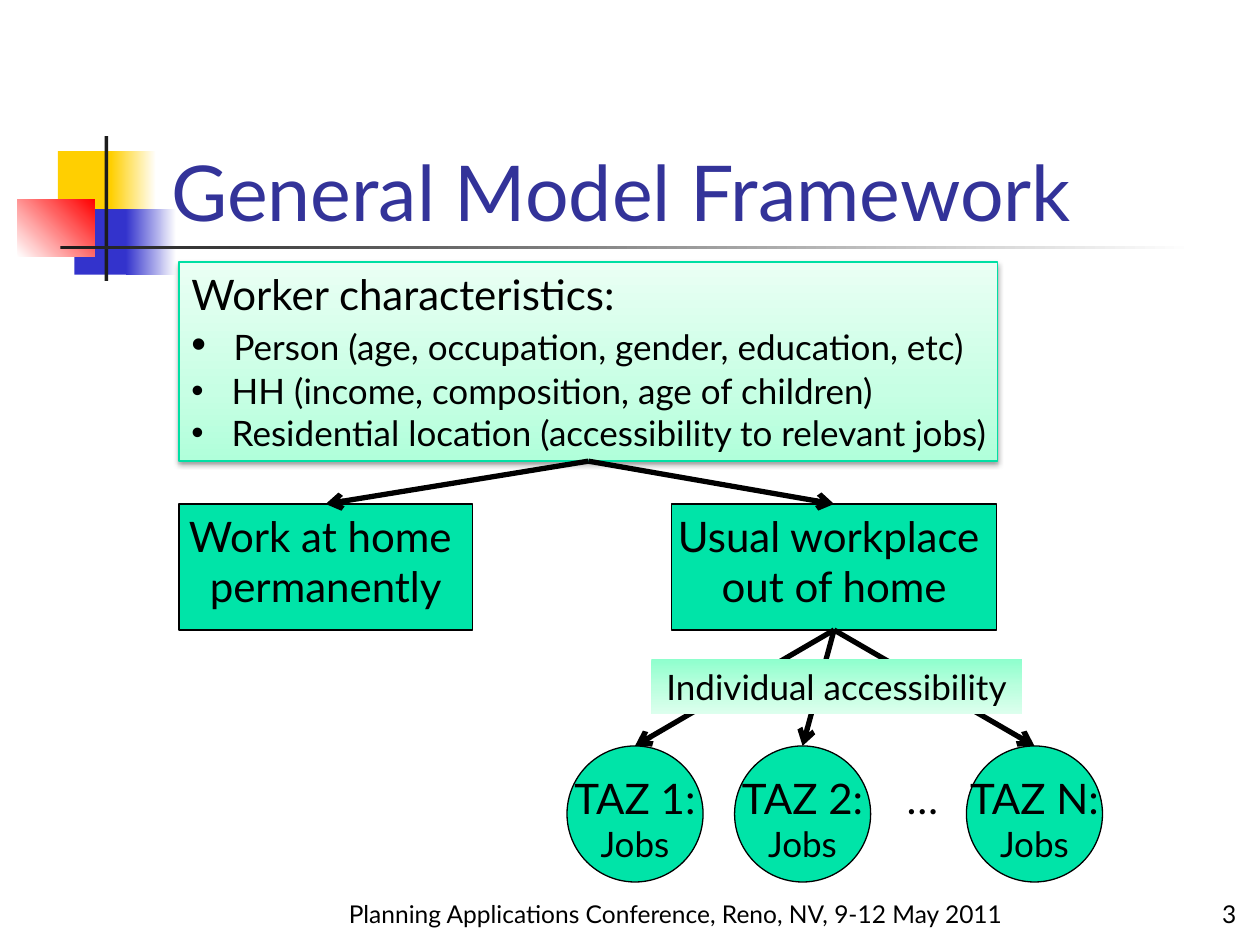
from lxml.etree import SubElement
from pptx import Presentation
from pptx.dml.color import RGBColor
from pptx.enum.shapes import MSO_CONNECTOR as Connector, MSO_SHAPE as Shape
from pptx.enum.text import MSO_ANCHOR as Anchor, PP_ALIGN as Align
from pptx.oxml.ns import qn
from pptx.util import Inches, Pt

FONT = "Lato"
COLORS = {
    "ink": "000000", "title": "333399", "green": "00E4A8", "edge": "00DFA4",
    "yellow": "FFCF01", "blue": "3333CC", "red": "FF0000",
    "dark": "1C1C1C", "white": "FFFFFF",
}

# Content: a paragraph is a list of (text, size) runs
TITLE = "General Model Framework"
FOOTER = "Planning Applications Conference, Reno, NV, 9-12 May 2011"
PAGE = "3"
WORKER = [
    [("Worker characteristics:", 24)],
    [(" ", 24), ("Person (age, occupation, gender, education, etc)", 20)],
    [(" HH (income, composition, age of children)", 20)],
    [(" Residential location (accessibility to relevant jobs)", 20)],
]
CHOICES = [  # left, width, lines
    (1.42, 2.33, ["Work at home ", "permanently"]),
    (5.33, 2.58, ["Usual workplace ", "out of home"]),
]
ZONES = [(4.5, "TAZ 1:"), (5.83, "TAZ 2:"), (7.67, "TAZ N:")]
ZONE_TOP, ZONE_SIZE = 5.92, 1.08
ACCESS = "Individual accessibility"

# Corner decoration: left, top, width, height, fill (name, or stops and angle)
DECOR = [
    (0.46, 1.2, 0.48, 0.52, "yellow"),
    (0.88, 1.2, 0.36, 0.52, (["yellow", "white"], 0)),
    (0.59, 1.66, 0.46, 0.52, "blue"),
    (1, 1.66, 0.4, 0.52, (["blue", "white"], 0)),
    (0.14, 1.58, 0.61, 0.46, (["white", "red"], 315)),
    (0.83, 1.08, 0.03, 1.15, "dark"),
    (0.48, 1.95, 9, 0.03, (["dark", "white"], 0)),
]


def rgb(name):
    return RGBColor.from_string(COLORS[name])


def fill_gradient(shape, stops, angle):
    """Stops are (percent, hex); the angle runs clockwise."""
    shape.fill.gradient()
    shape.fill.gradient_angle = (360 - angle) % 360
    stop_list = shape._element.spPr.find(qn("a:gradFill")).find(qn("a:gsLst"))
    for old in list(stop_list):
        stop_list.remove(old)
    for percent, color in stops:
        stop = SubElement(stop_list, qn("a:gs"), pos=str(percent * 1000))
        SubElement(stop, qn("a:srgbClr"), val=color)


def add_box(kind, left, top, width, height, fill=None, line=None):
    box = slide.shapes.add_shape(
        kind, Inches(left), Inches(top), Inches(width), Inches(height))
    box.shadow.inherit = False
    if fill:
        box.fill.solid()
        box.fill.fore_color.rgb = rgb(fill)
    if line:
        box.line.color.rgb = rgb(line)
        box.line.width = Pt(0.75)
    else:
        box.line.fill.background()
    return box


def write(shape, paragraphs, align=Align.CENTER, anchor=Anchor.TOP, wrap=False):
    frame = shape.text_frame
    frame.word_wrap = wrap
    frame.vertical_anchor = anchor
    for i, runs in enumerate(paragraphs):
        paragraph = frame.paragraphs[0] if i == 0 else frame.add_paragraph()
        paragraph.alignment = align
        for text, size in runs:
            run = paragraph.add_run()
            run.text = text
            run.font.name = FONT
            run.font.size = Pt(size)
            run.font.color.rgb = rgb("ink")


def add_label(left, top, width, height, text, size, **layout):
    label = slide.shapes.add_textbox(
        Inches(left), Inches(top), Inches(width), Inches(height))
    write(label, [[(text, size)]], **layout)
    return label


def add_arrow(source, target):
    """Arrow from the bottom middle of a rectangle to the top of the target."""
    arrow = slide.shapes.add_connector(Connector.STRAIGHT, 0, 0, 0, 0)
    arrow.begin_connect(source, 2)
    arrow.end_connect(target, 0)
    arrow.line.color.rgb = rgb("ink")
    arrow.line.width = Pt(3)
    SubElement(arrow.line._get_or_add_ln(), qn("a:tailEnd"), type="arrow")
    SubElement(arrow._element.spPr, qn("a:effectLst"))


prs = Presentation()
prs.slide_width, prs.slide_height = Inches(10), Inches(7.5)
slide = prs.slides.add_slide(prs.slide_layouts[5])

# Corner decoration
for left, top, width, height, fill in DECOR:
    if isinstance(fill, str):
        add_box(Shape.RECTANGLE, left, top, width, height, fill)
    else:
        (first, last), angle = fill
        block = add_box(Shape.RECTANGLE, left, top, width, height)
        fill_gradient(block, [(0, COLORS[first]), (100, COLORS[last])], angle)

# Title, drawn over the decoration
title = slide.shapes.title
slide.shapes._spTree.append(title._element)
title.left, title.top = Inches(1.26), Inches(0.68)
title.width, title.height = Inches(8.52), Inches(1.25)
title.text_frame.text = TITLE
title.text_frame.vertical_anchor = Anchor.BOTTOM
heading = title.text_frame.paragraphs[0]
heading.alignment = Align.LEFT
heading_font = heading.runs[0].font
heading_font.name, heading_font.size = FONT, Pt(44)
heading_font.color.rgb = rgb("title")

# Footer and page number
add_label(2.67, 6.92, 5.42, 0.5, FOOTER, 14,
          align=Align.LEFT, anchor=Anchor.BOTTOM, wrap=True)
add_label(7.83, 6.92, 2.08, 0.5, PAGE, 14,
          align=Align.RIGHT, anchor=Anchor.BOTTOM, wrap=True)

# Worker characteristics, with bullets and a soft shadow
worker = add_box(Shape.RECTANGLE, 1.42, 2.08, 6.5, 1.58, line="edge")
fill_gradient(worker, [(0, "B0FFDA"), (35, "C7FFE4"), (100, "EAFFF4")], 270)
write(worker, WORKER, align=Align.LEFT)
for item in worker.text_frame.paragraphs[1:]:
    props = item._p.get_or_add_pPr()
    props.set("marL", str(Inches(0.25)))
    props.set("indent", str(-Inches(0.25)))
    SubElement(props, qn("a:buFont"), typeface="Arial")
    SubElement(props, qn("a:buChar"), char="•")
effects = worker._element.spPr.find(qn("a:effectLst"))
shadow = SubElement(effects, qn("a:outerShdw"), blurRad=str(Pt(3.1)),
                    dist=str(Pt(1.6)), dir="5400000", rotWithShape="0")
shade = SubElement(shadow, qn("a:srgbClr"), val=COLORS["ink"])
SubElement(shade, qn("a:alpha"), val="38000")

# Workplace choices
choices = []
for left, width, lines in CHOICES:
    choice = add_box(Shape.RECTANGLE, left, 4, width, 1, "green", "ink")
    write(choice, [[(line, 24)] for line in lines])
    add_arrow(worker, choice)
    choices.append(choice)

# Zones under the out-of-home choice
for left, name in ZONES:
    zone = add_box(Shape.OVAL, left, ZONE_TOP, ZONE_SIZE, ZONE_SIZE, "green", "ink")
    write(zone, [[(name, 24)], [("Jobs", 20)]])
    add_arrow(choices[-1], zone)
add_label(7.08, 6.08, 0.48, 0.51, "…", 24)

# Accessibility label across the arrows
access = add_box(Shape.RECTANGLE, 5.17, 5.23, 2.94, 0.44)
fill_gradient(access, [(0, "8EFFCD"), (50, "BAFFDE"), (100, "DDFFEE")], 90)
write(access, [[(ACCESS, 20)]])

prs.save("out.pptx")
